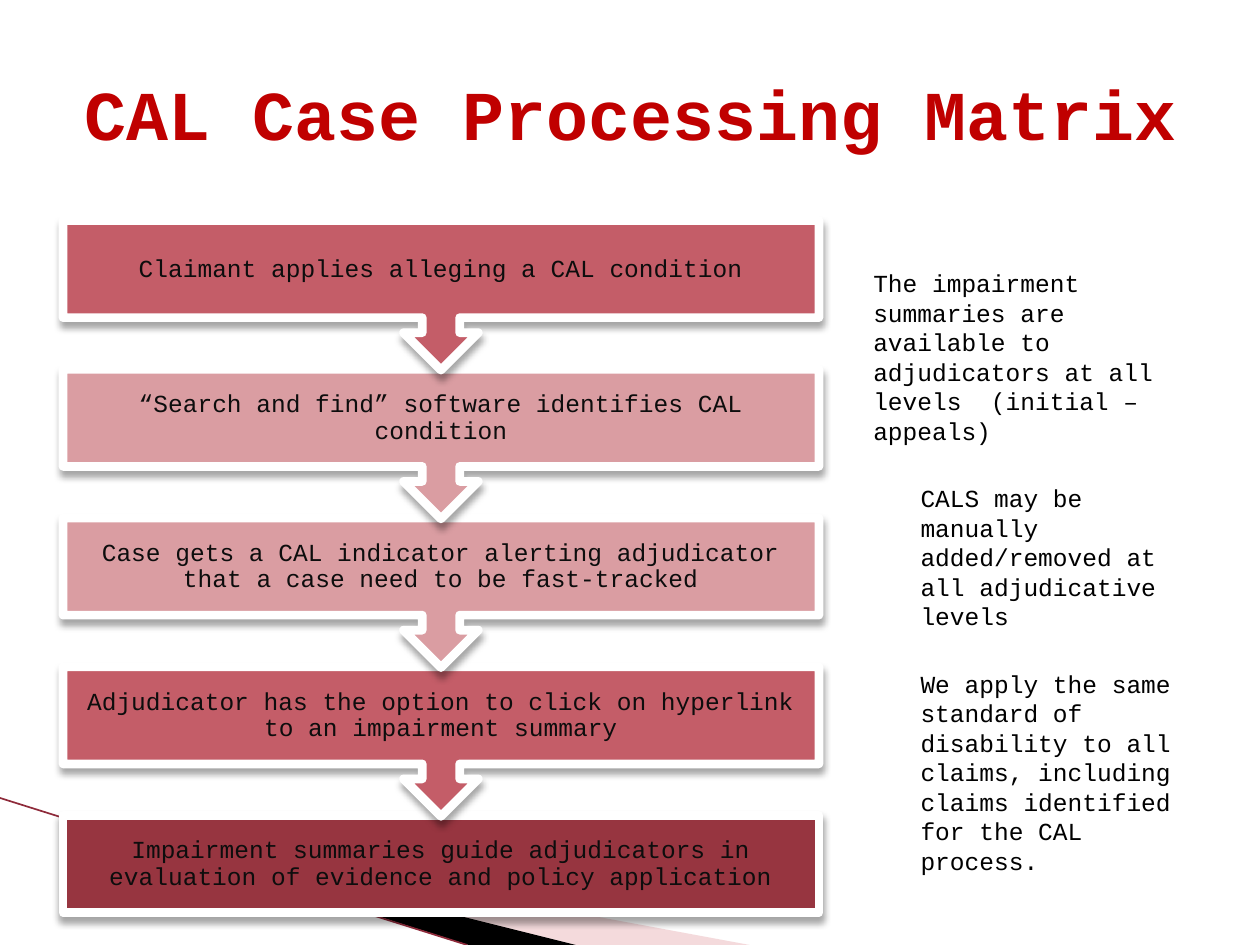
"""Build the CAL Case Processing Matrix slide: a five-step flow with side notes."""
from lxml import etree
from pptx import Presentation
from pptx.dml.color import RGBColor
from pptx.enum.shapes import MSO_CONNECTOR, MSO_SHAPE
from pptx.enum.text import MSO_ANCHOR, MSO_AUTO_SIZE, PP_ALIGN
from pptx.oxml import parse_xml
from pptx.oxml.ns import qn
from pptx.util import Pt

RECT, CALLOUT = MSO_SHAPE.RECTANGLE, MSO_SHAPE.DOWN_ARROW_CALLOUT
STRAIGHT = MSO_CONNECTOR.STRAIGHT
MIDDLE, TOP = MSO_ANCHOR.MIDDLE, MSO_ANCHOR.TOP
CENTER, LEFT = PP_ALIGN.CENTER, PP_ALIGN.LEFT
NO_FIT = MSO_AUTO_SIZE.NONE
FONT = "Courier New"
SHADOW = (
    '<a:effectLst xmlns:a="http://schemas.openxmlformats.org/drawingml/2006/main">'
    '<a:outerShdw blurRad="50800" dist="38100" dir="5400000" rotWithShape="0">'
    '<a:srgbClr val="000000"><a:alpha val="35000"/></a:srgbClr>'
    '</a:outerShdw></a:effectLst>'
)


def rgb(value):
    return RGBColor.from_string(value)


def style(p, size, color, align, bold=False):
    p.alignment = align
    for r in p.runs:
        r.font.name = FONT
        r.font.size = Pt(size)
        r.font.bold = bold
        r.font.color.rgb = rgb(color)


prs = Presentation()
prs.slide_width, prs.slide_height = Pt(720), Pt(540)
s = prs.slides.add_slide(prs.slide_layouts[1])

wedges = [
    ("E4A4A9", 40, [(39.6, 468), (428.4, 540), (328.3, 540)]),
    ("000000", 100, [(38.2, 467.3), (329, 540), (267.8, 540)]),
]
for color, opacity, points in wedges:
    points = [(Pt(x), Pt(y)) for x, y in points]
    builder = s.shapes.build_freeform(*points[0], scale=1.0)
    builder.add_line_segments(points[1:], close=True)
    sp = builder.convert_to_shape()
    sp.shadow.inherit = False
    sp.fill.solid()
    sp.fill.fore_color.rgb = rgb(color)
    sp.line.fill.background()
    if opacity < 100:
        clr = sp.fill._xPr.find(".//" + qn("a:srgbClr"))
        etree.SubElement(clr, qn("a:alpha")).set("val", str(opacity * 1000))

edge = s.shapes.add_connector(STRAIGHT, Pt(0), Pt(456), Pt(267), Pt(540))
edge.line.color.rgb = rgb("8E2A3A")
edge.line.width = Pt(0.95)
etree.SubElement(edge._element.spPr, qn("a:effectLst"))

steps = [
    ("Claimant applies alleging a CAL condition", "C45D68"),
    ("“Search and find” software identifies CAL condition", "DA9DA2"),
    ("Case gets a CAL indicator alerting adjudicator that a case need to be fast-tracked", "DA9DA2"),
    ("Adjudicator has the option to click on hyperlink to an impairment summary", "C45D68"),
    ("Impairment summaries guide adjudicators in evaluation of evidence and policy application", "973540"),
]
last = len(steps) - 1
for i, (text, color) in reversed(list(enumerate(steps))):
    kind, height = (RECT, 55.5) if i == last else (CALLOUT, 85.5)
    sp = s.shapes.add_shape(kind, Pt(36), Pt(126 + 85 * i), Pt(432), Pt(height))
    sp.fill.solid()
    sp.fill.fore_color.rgb = rgb(color)
    sp.line.color.rgb = rgb("FFFFFF")
    sp.line.width = Pt(5)
    sp._element.spPr.append(parse_xml(SHADOW))
    tf = sp.text_frame
    tf.word_wrap = True
    tf.vertical_anchor = MIDDLE
    tf.margin_left = tf.margin_right = tf.margin_top = tf.margin_bottom = Pt(7.9)
    tf.text = text
    p = tf.paragraphs[0]
    p.line_spacing = 0.9
    style(p, 14, "0D0D0D", CENTER)

title = s.shapes.title
title.left, title.top, title.width, title.height = Pt(36), Pt(12.2), Pt(648), Pt(103.7)
title.text_frame.text = "CAL Case Processing Matrix"
title.text_frame.vertical_anchor = MIDDLE
style(title.text_frame.paragraphs[0], 40, "C00000", CENTER, bold=True)

notes = [
    ("The impairment summaries are available to adjudicators at all levels  (initial – appeals)", 0),
    ("CALS may be manually added/removed at all adjudicative levels", 27),
    ("We apply the same standard of disability to all claims, including claims identified for the CAL process.", 27),
]
body = s.placeholders[1]
body.left, body.top, body.width, body.height = Pt(491.8), Pt(149.8), Pt(200.9), Pt(318.2)
tf = body.text_frame
tf.auto_size = NO_FIT
tf.vertical_anchor = TOP
tf.text = "\n".join(text for text, indent in notes)
for i, (p, (text, indent)) in enumerate(zip(tf.paragraphs, notes)):
    pPr = p._p.get_or_add_pPr()
    pPr.set("marL", str(Pt(indent)))
    pPr.set("indent", "0")
    etree.SubElement(pPr, qn("a:buNone"))
    p.space_before = Pt(22 if i else 0)
    style(p, 14, "000000", LEFT)

prs.save("out.pptx")
